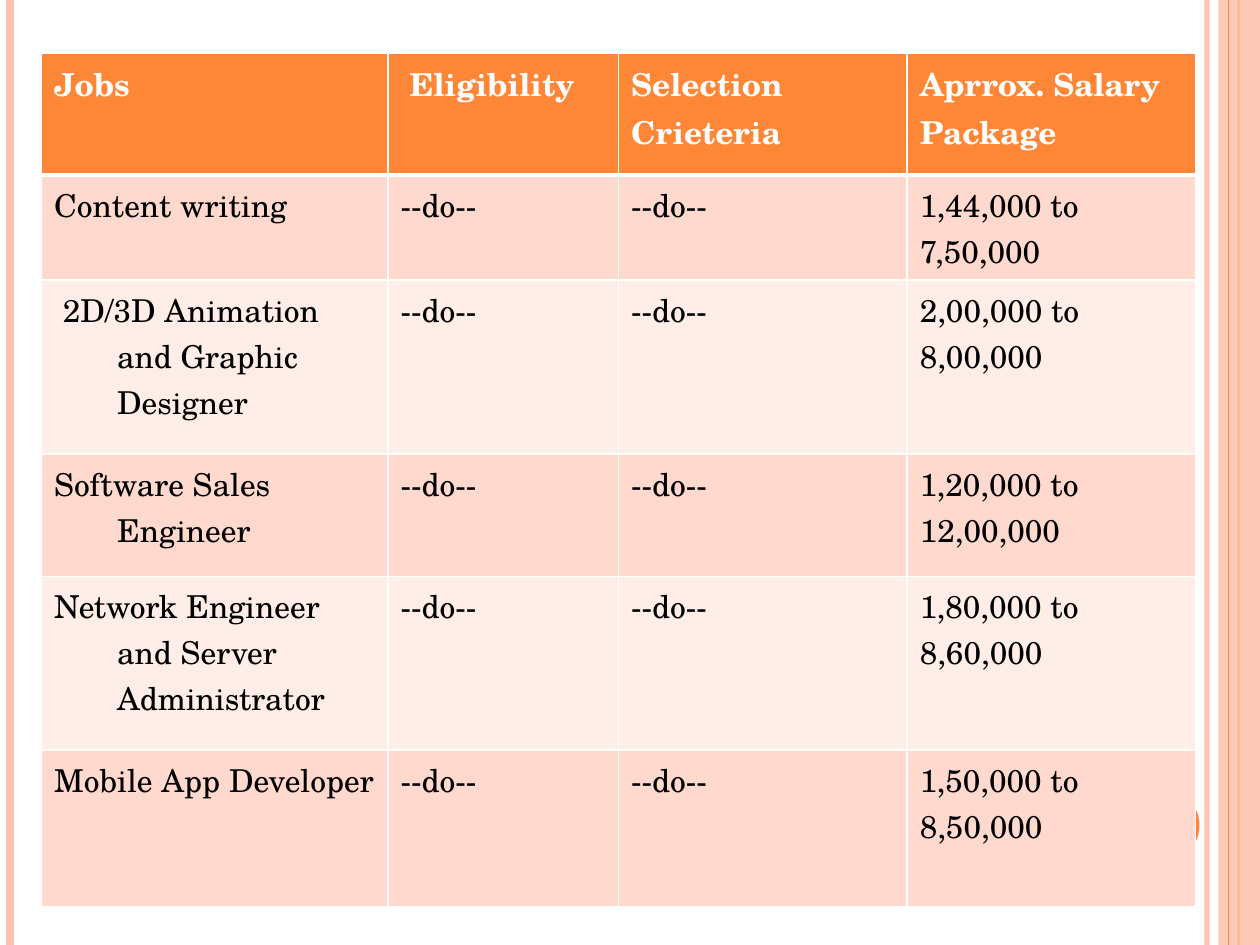
from dataclasses import dataclass

from lxml import etree
from pptx import Presentation
from pptx.dml.color import RGBColor
from pptx.enum.shapes import MSO_CONNECTOR, MSO_SHAPE
from pptx.oxml.ns import qn
from pptx.slide import Slide
from pptx.util import Inches, Pt

STRAIGHT = MSO_CONNECTOR.STRAIGHT
RECTANGLE = MSO_SHAPE.RECTANGLE
OVAL = MSO_SHAPE.OVAL

ORANGE = RGBColor(0xFE, 0x86, 0x37)
PEACH = RGBColor(0xFE, 0xC3, 0xAE)
DARK_BAND = RGBColor(0xFF, 0xD9, 0xCE)
LIGHT_BAND = RGBColor(0xFF, 0xED, 0xE8)
WHITE = RGBColor(0xFF, 0xFF, 0xFF)
BLACK = RGBColor(0, 0, 0)

PAGE_WIDTH = 10
PAGE_HEIGHT = 7.5
COLUMN_WIDTHS = [2.75, 1.83, 2.29, 2.29]
ROW_HEIGHTS = [0.97, 0.83, 1.38, 0.97, 1.38, 1.24]
HEADINGS = ["Jobs", " Eligibility", "Selection Crieteria", "Aprrox. Salary Package"]
DITTO = "--do--"
JOBS = [
    ("Content writing", "1,44,000 to 7,50,000", 0),
    (" 2D/3D Animation and Graphic Designer", "2,00,000 to 8,00,000", 0.5),
    ("Software Sales Engineer", "1,20,000 to 12,00,000", 0.5),
    ("Network Engineer and Server Administrator", "1,80,000 to 8,60,000", 0.5),
    ("Mobile App Developer", "1,50,000 to 8,50,000", 0.5),
]


def write_text(para, text, *, font, size, color, bold=False, hanging=0):
    if hanging:
        properties = para._p.get_or_add_pPr()
        properties.set("marL", str(Inches(hanging)))
        properties.set("indent", str(-Inches(hanging)))
    span = para.add_run()
    span.text = text
    span.font.name = font
    span.font.size = Pt(size)
    span.font.bold = bold
    span.font.color.rgb = color


def set_opacity(shape, percent):
    color = next(shape._element.spPr.iter(qn("a:srgbClr")))
    etree.SubElement(color, qn("a:alpha")).set("val", str(percent * 1000))


def set_borders(cell, widths, color):
    properties = cell._tc.get_or_add_tcPr()
    for position, (side, width) in enumerate(widths.items()):
        border = etree.Element(qn(f"a:ln{side}"), w=str(Pt(width)))
        fill = etree.SubElement(border, qn("a:solidFill"))
        etree.SubElement(fill, qn("a:srgbClr")).set("val", str(color))
        properties.insert(position, border)


@dataclass
class Painter:
    page: Slide
    font: str = "TeX Gyre Schola"
    size: float = 18

    def vertical_line(self, x, color, width, opacity=100):
        line = self.page.shapes.add_connector(
            STRAIGHT, Inches(x), 0, Inches(x), Inches(PAGE_HEIGHT)
        )
        line.line.color.rgb = color
        line.line.width = Pt(width)
        etree.SubElement(line._element.spPr, qn("a:effectLst"))
        if opacity < 100:
            set_opacity(line, opacity)

    def shape(self, kind, left, top, width, height, color, opacity=100):
        shape = self.page.shapes.add_shape(
            kind, Inches(left), Inches(top), Inches(width), Inches(height)
        )
        shape.shadow.inherit = False
        shape.fill.solid()
        shape.fill.fore_color.rgb = color
        shape.line.fill.background()
        if opacity < 100:
            set_opacity(shape, opacity)

    def cell(self, cell, text, fill, color, top, bottom, bold=False, hanging=0):
        cell.fill.solid()
        cell.fill.fore_color.rgb = fill
        set_borders(cell, {"L": 1, "R": 1, "T": top, "B": bottom}, WHITE)
        write_text(
            cell.text_frame.paragraphs[0], text, font=self.font, size=self.size,
            color=color, bold=bold, hanging=hanging,
        )

    def job_table(self, left, top):
        table = self.page.shapes.add_table(
            len(ROW_HEIGHTS), len(COLUMN_WIDTHS), Inches(left), Inches(top),
            Inches(sum(COLUMN_WIDTHS)), Inches(sum(ROW_HEIGHTS)),
        ).table
        for column, width in zip(table.columns, COLUMN_WIDTHS):
            column.width = Inches(width)
        for row, height in zip(table.rows, ROW_HEIGHTS):
            row.height = Inches(height)
        for column, heading in enumerate(HEADINGS):
            self.cell(table.cell(0, column), heading, ORANGE, WHITE, 1, 3, bold=True)
        for row, (job, salary, hanging) in enumerate(JOBS, start=1):
            band = DARK_BAND if row % 2 else LIGHT_BAND
            top_border = 3 if row == 1 else 1
            for column, text in enumerate([job, DITTO, DITTO, salary]):
                self.cell(
                    table.cell(row, column), text, band, BLACK, top_border, 1,
                    hanging=hanging if column == 0 else 0,
                )


def main():
    deck = Presentation()
    deck.slide_width = Inches(PAGE_WIDTH)
    deck.slide_height = Inches(PAGE_HEIGHT)
    painter = Painter(deck.slides.add_slide(deck.slide_layouts[6]))

    painter.vertical_line(9.58, PEACH, 3, opacity=93)
    painter.vertical_line(0.08, PEACH, 4.5)
    painter.vertical_line(9.83, ORANGE, 1.5)
    painter.shape(RECTANGLE, 9.67, 0, 0.33, PAGE_HEIGHT, PEACH, opacity=87)
    painter.vertical_line(9.75, ORANGE, 0.75)
    painter.shape(OVAL, 8.92, 6.25, 0.6, 0.6, ORANGE)
    painter.job_table(0.33, 0.42)

    deck.save("out.pptx")


if __name__ == "__main__":
    main()
